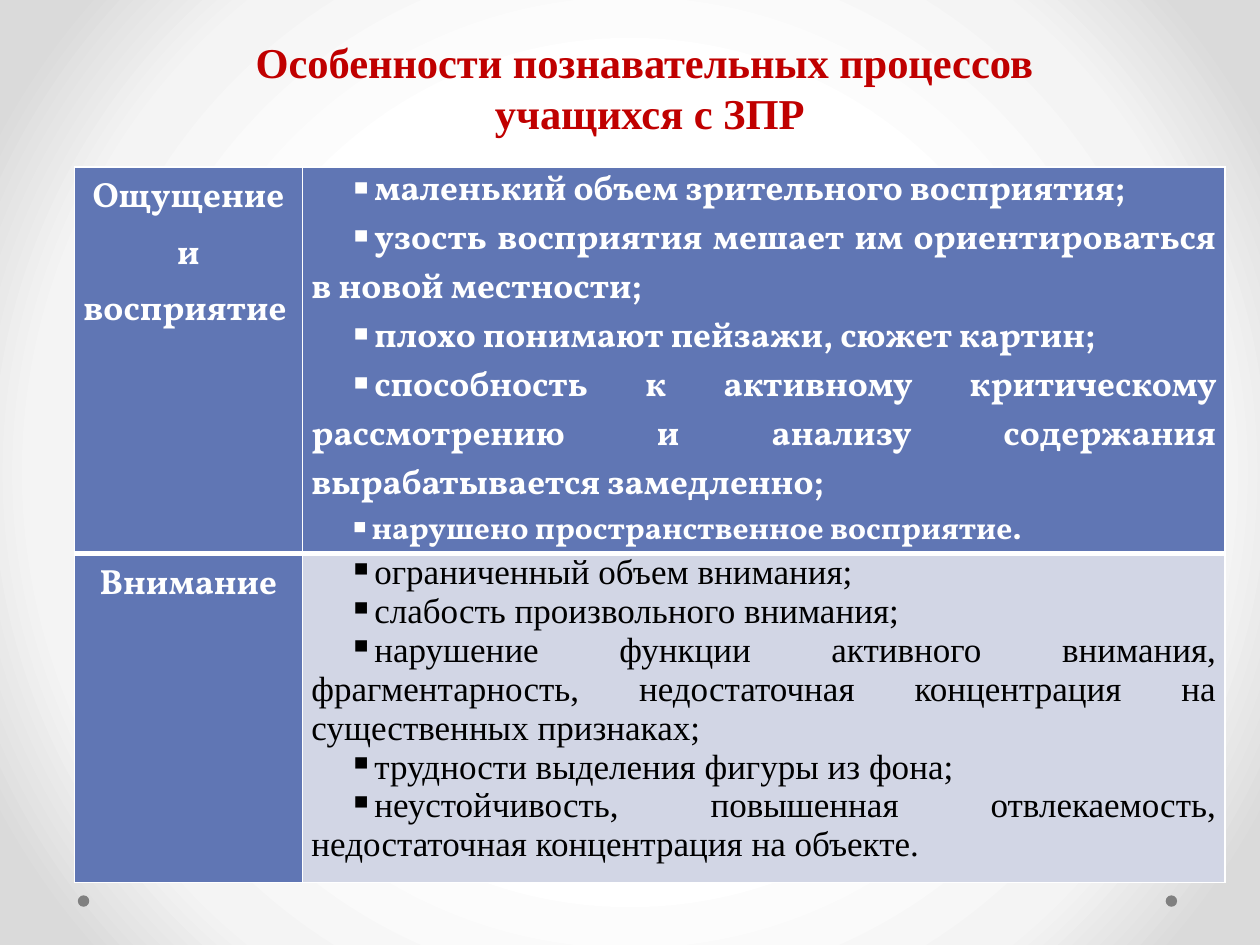
import lxml.etree
import pptx
import pptx.dml.color
import pptx.enum.shapes
import pptx.enum.text
import pptx.oxml
import pptx.oxml.ns
from pptx.util import Cm, Pt

COLORS = {
    "title": "C00000", "white": "FFFFFF", "black": "000000",
    "blue": "6076B4", "pale": "D2D6E5", "dot": "808080",
}
BACKGROUND_STOPS = [(50, "FFFFFF"), (76, "F4F4F4"), (92, "DADADA")]
SERIF, DISPLAY = "Times New Roman", "Vollkorn"
TITLE = "Особенности познавательных процессов \vучащихся с ЗПР"
ROWS = [
    {
        "heading": "Ощущение и восприятие ",
        "points": [
            ("маленький объем зрительного восприятия;", 20),
            ("узость восприятия мешает им ориентироваться в новой местности;", 20),
            ("плохо понимают пейзажи, сюжет картин;", 20),
            ("способность к активному критическому рассмотрению и анализу "
             "содержания вырабатывается замедленно;", 20),
            ("нарушено пространственное восприятие.", 18),
        ],
        "font": DISPLAY, "color": "white", "bold": True, "fill": "blue",
        "height": 6.6, "top_line": 1, "bottom_line": 3,
    },
    {
        "heading": "Внимание",
        "points": [
            ("ограниченный объем внимания;", 20),
            ("слабость произвольного внимания; ", 20),
            ("нарушение функции активного внимания, фрагментарность, "
             "недостаточная концентрация на существенных признаках;", 20),
            ("трудности выделения фигуры из фона; ", 20),
            ("неустойчивость, повышенная отвлекаемость, "
             "недостаточная концентрация на объекте. ", 20),
        ],
        "font": SERIF, "color": "black", "bold": False, "fill": "pale",
        "height": 6.63, "top_line": 3, "bottom_line": 1,
    },
]
COLUMN_WIDTHS = [4.6, 18.6]
TABLE_LEFT, TABLE_TOP = 1.5, 3.37
DOT_LEFTS, DOT_TOP, DOT_SIZE = [1.57, 23.5], 18.05, 0.23
ALIGN = pptx.enum.text.PP_ALIGN


def rgb(name):
    return pptx.dml.color.RGBColor.from_string(COLORS[name])


def set_background(slide):
    """Fill the slide with a radial gradient around its centre."""
    slide.background.fill.gradient()
    gradient = slide.background.fill._fill._gradFill
    for child in list(gradient):
        gradient.remove(child)
    tag = pptx.oxml.ns.qn
    stops = lxml.etree.SubElement(gradient, tag("a:gsLst"))
    for position, color in BACKGROUND_STOPS:
        stop = lxml.etree.SubElement(stops, tag("a:gs"), pos=str(position * 1000))
        lxml.etree.SubElement(stop, tag("a:srgbClr"), val=color)
    shade = lxml.etree.SubElement(gradient, tag("a:path"), attrib={"path": "circle"})
    sides = {side: "50000" for side in "ltrb"}
    lxml.etree.SubElement(shade, tag("a:fillToRect"), attrib=sides)


def format_font(paragraph, name, size, color, bold=True):
    font = paragraph.font
    font.name, font.size, font.bold, font.italic = name, Pt(size), bold, False
    font.color.rgb = rgb(color)


def add_bullet(paragraph):
    """Indent the first line and start it with a square bullet."""
    properties = paragraph._p.get_or_add_pPr()
    properties.set("marL", "0")
    properties.set("indent", str(Cm(0.74)))
    lxml.etree.SubElement(properties, pptx.oxml.ns.qn("a:buChar"), char="▪")


def format_cell(cell, fill, margin, top_line, bottom_line):
    cell.margin_left = cell.margin_right = Cm(margin)
    cell.margin_top = cell.margin_bottom = 0
    cell.fill.solid()
    cell.fill.fore_color.rgb = rgb(fill)
    properties = cell._tc.get_or_add_tcPr()
    widths = {"L": 1, "R": 1, "T": top_line, "B": bottom_line}
    for index, (side, width) in enumerate(widths.items()):
        line = pptx.oxml.parse_xml(
            f'<a:ln{side} {pptx.oxml.ns.nsdecls("a")} w="{Pt(width)}"><a:solidFill>'
            f'<a:srgbClr val="{COLORS["white"]}"/></a:solidFill></a:ln{side}>')
        properties.insert(index, line)


def add_dots(slide):
    for left in DOT_LEFTS:
        dot = slide.shapes.add_shape(
            pptx.enum.shapes.MSO_SHAPE.OVAL,
            Cm(left), Cm(DOT_TOP), Cm(DOT_SIZE), Cm(DOT_SIZE))
        dot.shadow.inherit = False
        dot.fill.solid()
        dot.fill.fore_color.rgb = rgb("dot")
        dot.line.fill.background()


def format_title(title):
    title.left, title.top, title.width, title.height = Cm(1), Cm(0.91), Cm(24.2), Cm(2)
    frame = title.text_frame
    frame.text = TITLE
    frame.word_wrap = True
    frame.auto_size = pptx.enum.text.MSO_AUTO_SIZE.NONE
    frame.vertical_anchor = pptx.enum.text.MSO_ANCHOR.BOTTOM
    paragraph = frame.paragraphs[0]
    paragraph.alignment = ALIGN.CENTER
    format_font(paragraph, SERIF, 24.3, "title")


def add_features_table(slide):
    table = slide.shapes.add_table(
        len(ROWS), len(COLUMN_WIDTHS), Cm(TABLE_LEFT), Cm(TABLE_TOP),
        Cm(sum(COLUMN_WIDTHS)), Cm(sum(row["height"] for row in ROWS))).table
    for column, width in zip(table.columns, COLUMN_WIDTHS):
        column.width = Cm(width)
    for index, row in enumerate(ROWS):
        table.rows[index].height = Cm(row["height"])
        heading, points = table.cell(index, 0), table.cell(index, 1)
        lines = row["top_line"], row["bottom_line"]
        format_cell(heading, "blue", 0.13, *lines)
        format_cell(points, row["fill"], 0.18, *lines)

        heading.text = row["heading"]
        paragraph = heading.text_frame.paragraphs[0]
        paragraph.alignment = ALIGN.CENTER
        paragraph.line_spacing = 1.15
        format_font(paragraph, DISPLAY, 20, "white")

        points.text = "\n".join(text for text, size in row["points"])
        for paragraph, (text, size) in zip(points.text_frame.paragraphs, row["points"]):
            paragraph.alignment = ALIGN.JUSTIFY
            add_bullet(paragraph)
            format_font(paragraph, row["font"], size, row["color"], row["bold"])


def main():
    presentation = pptx.Presentation()
    presentation.slide_width, presentation.slide_height = Cm(25.4), Cm(19.05)
    slide = presentation.slides.add_slide(presentation.slide_layouts[5])
    set_background(slide)
    add_dots(slide)
    format_title(slide.shapes.title)
    add_features_table(slide)
    presentation.save("out.pptx")


if __name__ == "__main__":
    main()
